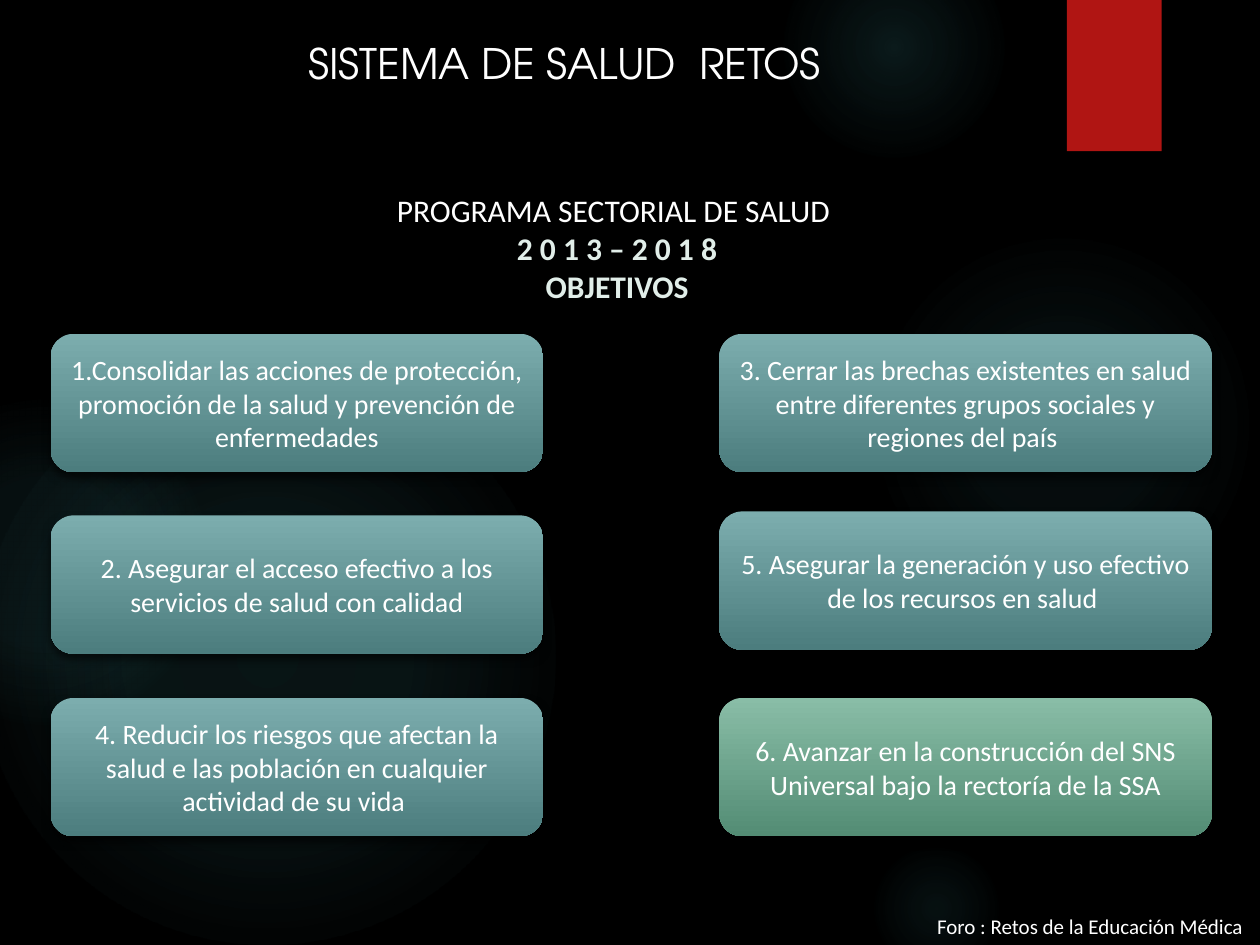
from lxml import etree
from pptx import Presentation
from pptx.dml.color import RGBColor
from pptx.enum.shapes import MSO_SHAPE
from pptx.enum.text import MSO_ANCHOR, PP_ALIGN
from pptx.oxml.ns import qn
from pptx.util import Cm, Pt

OVAL = MSO_SHAPE.OVAL
RECT = MSO_SHAPE.RECTANGLE
ROUND = MSO_SHAPE.ROUNDED_RECTANGLE
MIDDLE = MSO_ANCHOR.MIDDLE
LEFT = PP_ALIGN.LEFT
CENTER = PP_ALIGN.CENTER

WHITE = "FFFFFF"
GLOW = "50B9C1"
TEAL = ("7CADAE", "4C7D7E")
GREEN = ("89BDA7", "538C74")
TITLE = {"name": "TeX Gyre Adventor", "size": Pt(24)}
HEAD = {"name": "Calibri", "size": Pt(18)}
BOLD = {**HEAD, "bold": True}
BODY = {"name": "Calibri", "size": Pt(16)}
FOOT = {"name": "Calibri", "size": Pt(12)}

GLOWS = [
    (17.5, 4.65, 7.82, [(0, 7), (36, 6), (69, 0)]),
    (15.8, -1.27, 4.45, [(0, 14), (36, 7), (73, 0)]),
    (17.5, 16.94, 2.74, [(0, 9), (36, 5), (66, 0)]),
    (-0.43, 7.42, 11.63, [(0, 11), (36, 10), (75, 0)]),
    (-2.34, 8.05, 6.55, [(0, 8), (36, 8), (72, 0)]),
]
COLUMNS = [
    (1.02, [
        (6.73, TEAL, "1.Consolidar las acciones de protección, promoción de la salud "
                     "y prevención de enfermedades"),
        (10.39, TEAL, "2. Asegurar el acceso efectivo a los servicios de salud con calidad"),
        (14.07, TEAL, "4. Reducir los riesgos que afectan la salud e las población "
                      "en cualquier actividad de su vida "),
    ]),
    (14.5, [
        (6.73, TEAL, "3. Cerrar las brechas existentes en salud entre diferentes "
                     "grupos sociales y regiones del país "),
        (10.31, TEAL, "5. Asegurar la generación y uso efectivo de los recursos en salud "),
        (14.07, GREEN, "6. Avanzar en la construcción del SNS Universal bajo "
                       "la rectoría de la SSA"),
    ]),
]


def color(code):
    return RGBColor.from_string(code)


def add_form(slide, kind, *box):
    form = slide.shapes.add_shape(kind, *map(Cm, box))
    form.shadow.inherit = False
    form.line.fill.background()
    return form


def add_node(parent, tag, **attrs):
    return etree.SubElement(parent, qn(tag), {key: str(val) for key, val in attrs.items()})


def add_shade(form, blur, dist, alpha):
    effects = form._element.spPr.find(qn("a:effectLst"))
    shade = add_node(effects, "a:outerShdw", blurRad=Pt(blur), dist=Pt(dist),
                     dir=5400000, rotWithShape=0)
    tint = add_node(shade, "a:srgbClr", val="000000")
    add_node(tint, "a:alpha", val=alpha * 1000)


def add_glow(slide, left, top, size, stops):
    form = add_form(slide, OVAL, left, top, size, size)
    form.fill.gradient()
    grad = form._element.spPr.find(qn("a:gradFill"))
    for child in list(grad):
        grad.remove(child)
    group = add_node(grad, "a:gsLst")
    for place, alpha in stops:
        stop = add_node(group, "a:gs", pos=place * 1000)
        tint = add_node(stop, "a:srgbClr", val=GLOW)
        add_node(tint, "a:alpha", val=alpha * 1000)
    focus = add_node(grad, "a:path", path="circle")
    add_node(focus, "a:fillToRect", l=50000, t=50000, r=50000, b=50000)


def write(para, text, style, code=WHITE, align=LEFT):
    para.alignment = align
    run = para.add_run()
    run.text = text
    for key, val in style.items():
        setattr(run.font, key, val)
    run.font.color.rgb = color(code)


def add_card(slide, left, top, tones, text):
    card = add_form(slide, ROUND, left, top, 9.93, 2.79)
    card.fill.gradient()
    card.fill.gradient_angle = 270
    for stop, place, tone in zip(card.fill.gradient_stops, (0, 1), tones):
        stop.position = place
        stop.color.rgb = color(tone)
    add_shade(card, 5, 3, 60)
    frame = card.text_frame
    frame.word_wrap = True
    frame.vertical_anchor = MIDDLE
    write(frame.paragraphs[0], text, BODY, align=CENTER)


def add_text(slide, box, lines, align=LEFT, wrap=True):
    frame = slide.shapes.add_textbox(*map(Cm, box)).text_frame
    frame.word_wrap = wrap
    for index, line in enumerate(lines):
        para = frame.add_paragraph() if index else frame.paragraphs[0]
        write(para, *line, align=align)


def main():
    deck = Presentation()
    deck.slide_width, deck.slide_height = Cm(25.4), Cm(19.05)
    slide = deck.slides.add_slide(deck.slide_layouts[6])
    back = slide.background.fill
    back.solid()
    back.fore_color.rgb = color("000000")
    for glow in GLOWS:
        add_glow(slide, *glow)
    flag = add_form(slide, RECT, 21.51, 0, 1.91, 3.05)
    flag.fill.solid()
    flag.fill.fore_color.rgb = color("B01513")
    add_shade(flag, 3, 2, 45)
    add_text(slide, (18.64, 18.29, 6.76, 0.76),
             [("Foro : Retos de la Educación Médica", FOOT)], wrap=False)
    add_text(slide, (5.97, 0.64, 14.88, 1.27), [("SISTEMA DE SALUD  RETOS", TITLE)])
    for left, cards in COLUMNS:
        for card in cards:
            add_card(slide, left, *card)
    add_text(slide, (6.02, 3.73, 12.7, 2.57), [
        ("PROGRAMA SECTORIAL DE SALUD", HEAD),
        (" 2 0 1 3 – 2 0 1 8", BOLD, "E1EEE9"),
        (" OBJETIVOS", BOLD, "E1EEE9"),
    ], CENTER)
    deck.save("out.pptx")


if __name__ == "__main__":
    main()
